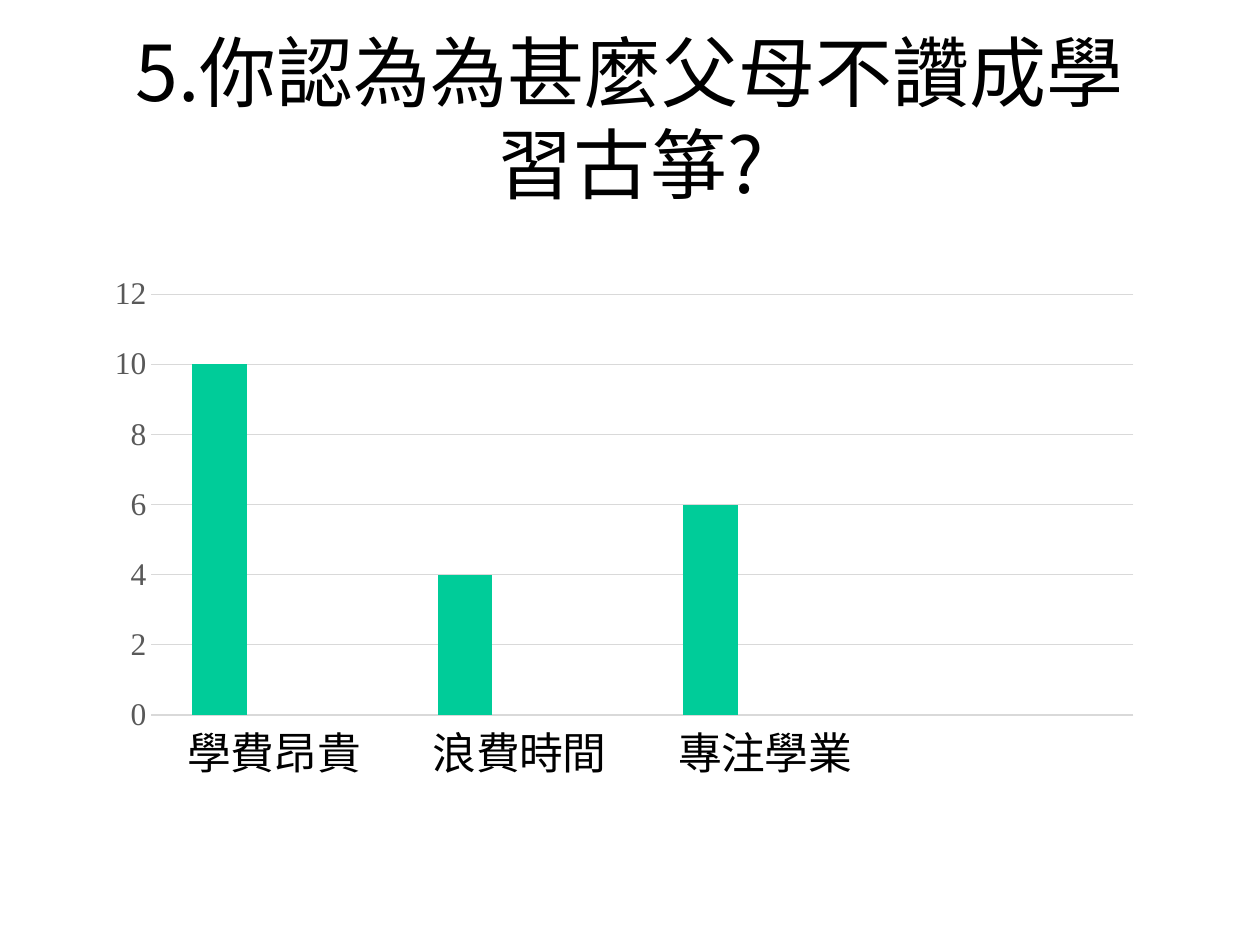
import pptx
import pptx.chart.data
import pptx.dml.color
import pptx.enum.chart
import pptx.enum.text
import pptx.oxml
import pptx.oxml.ns
import pptx.util
from pptx.util import Inches

BLACK = pptx.dml.color.RGBColor(0x00, 0x00, 0x00)
WHITE = pptx.dml.color.RGBColor(0xFF, 0xFF, 0xFF)
GREEN = pptx.dml.color.RGBColor(0x00, 0xCC, 0x99)
BLUE = pptx.dml.color.RGBColor(0x33, 0x33, 0xCC)
GRAY = pptx.dml.color.RGBColor(0x59, 0x59, 0x59)
PALE = pptx.dml.color.RGBColor(0xD9, 0xD9, 0xD9)
SANS = "Noto Sans CJK SC"
SERIF = "Times New Roman"
REASONS = ["學費昂貴", "浪費時間", "專注學業", ""]
SERIES = [
    ("Series 1", [10, 4, 6, None], GREEN),
    ("Series 2", [None] * 4, BLUE),
    ("Series 3", [None] * 4, WHITE),
]
PLOT = {"x": 0.053, "y": 0.037, "w": 0.917, "h": 0.742}


def set_font(font, name, size, color):
    """Set the face, size and colour of a font."""
    font.name = name
    font.size = pptx.util.Pt(size)
    font.color.rgb = color


def add_title(slide, text):
    """Add the centred question at the top."""
    box = slide.shapes.add_textbox(Inches(0.75), Inches(0.3), Inches(8.5), Inches(1.25))
    frame = box.text_frame
    frame.word_wrap = True
    frame.vertical_anchor = pptx.enum.text.MSO_ANCHOR.MIDDLE
    par = frame.paragraphs[0]
    par.alignment = pptx.enum.text.PP_ALIGN.CENTER
    run = par.add_run()
    run.text = text
    set_font(run.font, SANS, 44, BLACK)
    asian = pptx.oxml.parse_xml(f'<a:ea {pptx.oxml.ns.nsdecls("a")} typeface="{SANS}"/>')
    run.font._element.append(asian)


def place_plot(chart):
    """Fix the inner plot area as fractions of the chart."""
    area = chart._chartSpace.chart.plotArea
    for old in area.findall(pptx.oxml.ns.qn("c:layout")):
        area.remove(old)
    modes = "".join(f'<c:{key}Mode val="edge"/>' for key in "xy")
    sizes = "".join(f'<c:{key} val="{val}"/>' for key, val in PLOT.items())
    area.insert(0, pptx.oxml.parse_xml(
        f'<c:layout {pptx.oxml.ns.nsdecls("c")}><c:manualLayout>'
        f'<c:layoutTarget val="inner"/>{modes}{sizes}</c:manualLayout></c:layout>'))


def style_axis(axis, size, color):
    """Give an axis its font and hide its line and ticks."""
    axis.major_tick_mark = pptx.enum.chart.XL_TICK_MARK.NONE
    axis.minor_tick_mark = pptx.enum.chart.XL_TICK_MARK.NONE
    axis.format.line.fill.background()
    set_font(axis.tick_labels.font, SERIF, size, color)


def add_bars(slide):
    """Add the column chart of reasons."""
    data = pptx.chart.data.CategoryChartData()
    data.categories = REASONS
    for name, vals, _ in SERIES:
        data.add_series(name, vals)
    kind = pptx.enum.chart.XL_CHART_TYPE.COLUMN_CLUSTERED
    chart = slide.shapes.add_chart(
        kind, Inches(0.75), Inches(2.17), Inches(8.5), Inches(4.5), data).chart
    chart.has_legend = False
    chart.has_title = False
    set_font(chart.font, SERIF, 10, BLACK)
    plot = chart.plots[0]
    plot.gap_width = 150
    plot.overlap = 0
    plot.vary_by_categories = False
    for bars, (_, _, color) in zip(plot.series, SERIES):
        bars.format.fill.solid()
        bars.format.fill.fore_color.rgb = color
    style_axis(chart.category_axis, 25, BLACK)
    scale = chart.value_axis
    style_axis(scale, 18, GRAY)
    scale.minimum_scale = 0
    scale.maximum_scale = 12
    scale.major_unit = 2
    scale.has_major_gridlines = True
    grid = scale.major_gridlines.format.line
    grid.color.rgb = PALE
    grid.width = pptx.util.Pt(0.75)
    place_plot(chart)


def main():
    """Build and save the slide."""
    deck = pptx.Presentation()
    deck.slide_width = Inches(10)
    deck.slide_height = Inches(7.5)
    slide = deck.slides.add_slide(deck.slide_layouts[6])
    add_title(slide, "5.你認為為甚麼父母不讚成學習古箏?")
    add_bars(slide)
    deck.save("out.pptx")


if __name__ == "__main__":
    main()
